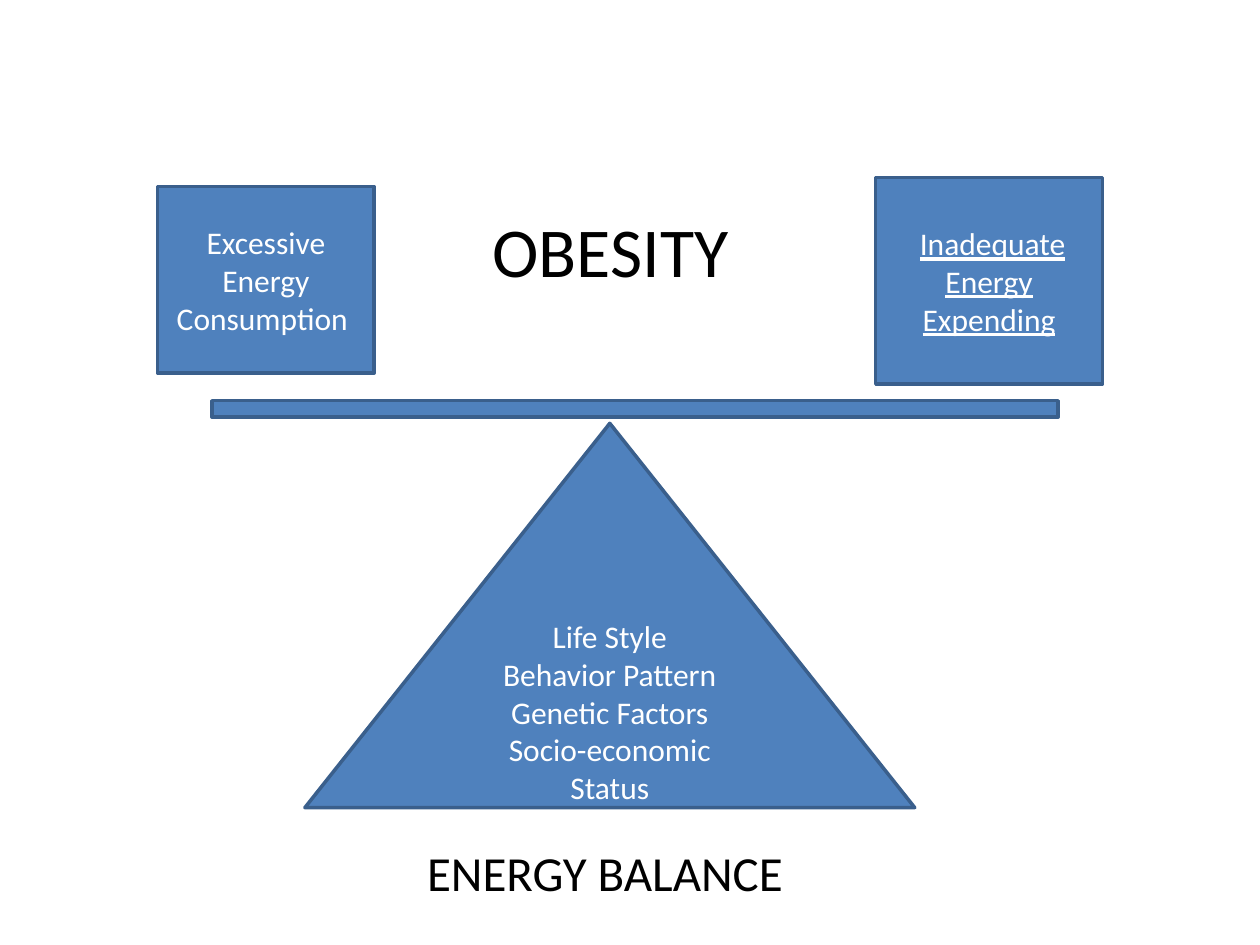
from pptx import Presentation
from pptx.dml.color import RGBColor
from pptx.enum.shapes import MSO_SHAPE
from pptx.enum.text import MSO_ANCHOR, MSO_AUTO_SIZE, PP_ALIGN
from pptx.util import Inches, Pt

FILL, LINE, WHITE, BLACK = "4F81BD", "3A5F8C", "FFFFFF", "000000"


def rgb(value):
    return RGBColor.from_string(value)


def write(tf, paragraphs, size, color):
    tf.word_wrap = True
    for i, runs in enumerate(paragraphs):
        p = tf.paragraphs[0] if i == 0 else tf.add_paragraph()
        p.alignment = PP_ALIGN.CENTER
        for text, extra in runs:
            r = p.add_run()
            r.text = text
            font = {"name": "Calibri", "size": Pt(size), **extra}
            for name, value in font.items():
                setattr(r.font, name, value)
            r.font.color.rgb = rgb(color)


def add_block(s, kind, box, paragraphs=()):
    sp = s.shapes.add_shape(kind, *map(Inches, box))
    sp.shadow.inherit = False
    sp.fill.solid()
    sp.fill.fore_color.rgb = rgb(FILL)
    sp.line.color.rgb = rgb(LINE)
    sp.line.width = Pt(2)
    sp.text_frame.vertical_anchor = MSO_ANCHOR.MIDDLE
    write(sp.text_frame, paragraphs, 18, WHITE)


def add_label(s, box, text, size):
    tf = s.shapes.add_textbox(*map(Inches, box)).text_frame
    write(tf, [[(text, {})]], size, BLACK)
    tf.auto_size = MSO_AUTO_SIZE.SHAPE_TO_FIT_TEXT


def main():
    prs = Presentation()
    prs.slide_width, prs.slide_height = Inches(10), Inches(7.5)
    s = prs.slides.add_slide(prs.slide_layouts[6])

    factors = ["Life Style", "Behavior Pattern", "Genetic Factors",
               "Socio-economic Status"]
    intake = [("Excessive Energy Consumption ", {})]
    expending = [(" ", {}),
                 ("Inadequate Energy Expending", {"underline": True})]

    add_block(s, MSO_SHAPE.ISOSCELES_TRIANGLE, (2.42, 3.36, 4.84, 3.05),
              [[(factor, {})] for factor in factors])
    add_block(s, MSO_SHAPE.MATH_MINUS, (0.47, 2.97, 9.14, 0.55))
    add_block(s, MSO_SHAPE.RECTANGLE, (1.25, 1.48, 1.72, 1.48), [intake])
    add_block(s, MSO_SHAPE.RECTANGLE, (6.95, 1.41, 1.8, 1.64), [expending])
    add_label(s, (3.44, 1.6, 2.81, 1.08), "OBESITY", 40)
    add_label(s, (1.95, 6.64, 5.7, 0.57), "ENERGY BALANCE", 28)
    prs.save("out.pptx")


if __name__ == "__main__":
    main()
